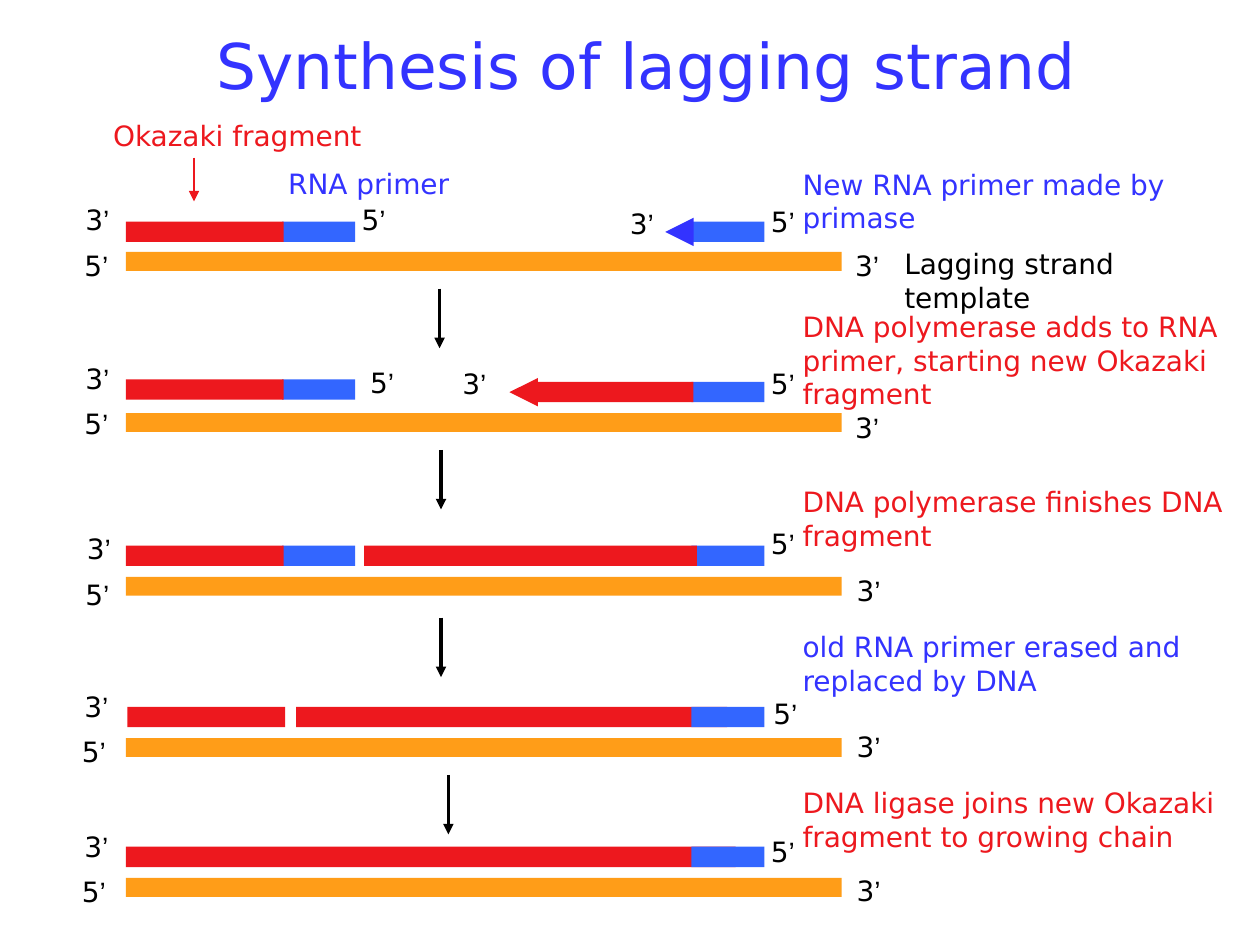
import dataclasses

import lxml.etree
import pptx
import pptx.dml.color
import pptx.enum.shapes
import pptx.enum.text
import pptx.oxml.ns
import pptx.util

Cm = pptx.util.Cm
Pt = pptx.util.Pt


@dataclasses.dataclass(frozen=True)
class Theme:
    template: str = "FF9D18"
    dna: str = "ED181E"
    primer: str = "3366FF"
    blue_text: str = "3333FF"
    black: str = "000000"
    font: str = "DejaVu Sans"
    prime_font: str = "Arial"
    title_size: int = 36
    body_size: int = 16


THEME = Theme()
STRAND_HEIGHT = 0.41
TEMPLATE_HEIGHT = 0.38
OLD_PRIMER = (THEME.primer, 5.69, 1.47)
NEW_PRIMER = (THEME.primer, 13.94, 1.47)
OLD_FRAGMENT = (THEME.dna, 2.54, 3.18)


class StrandSlide:
    def __init__(self, page, theme):
        self.page = page
        self.theme = theme

    def color(self, value):
        return pptx.dml.color.RGBColor.from_string(value)

    def bar(self, color, left, top, width, height):
        box = self.page.shapes.add_shape(
            pptx.enum.shapes.MSO_SHAPE.RECTANGLE, Cm(left), Cm(top), Cm(width), Cm(height))
        box.shadow.inherit = False
        box.fill.solid()
        box.fill.fore_color.rgb = self.color(color)
        box.line.fill.background()
        return box

    def arrow(self, start, end, color, weight, head="med"):
        line = self.page.shapes.add_connector(
            pptx.enum.shapes.MSO_CONNECTOR.STRAIGHT, *map(Cm, start + end))
        line.line.color.rgb = self.color(color)
        line.line.width = Pt(weight)
        lxml.etree.SubElement(line.line._get_or_add_ln(), pptx.oxml.ns.qn("a:tailEnd"),
                              type="triangle", w=head, len=head)
        lxml.etree.SubElement(line._element.spPr, pptx.oxml.ns.qn("a:effectLst"))
        return line

    def growing_tip(self, bar, left, top, color):
        middle = top + STRAND_HEIGHT / 2
        tip = self.arrow((left, middle), (left - 0.53, middle), color, 3.25, "lg")
        tip.begin_connect(bar, 1)

    def text(self, words, left, top, width, height, color, wrap=False):
        box = self.page.shapes.add_textbox(Cm(left), Cm(top), Cm(width), Cm(height))
        frame = box.text_frame
        frame.word_wrap = wrap
        frame.auto_size = pptx.enum.text.MSO_AUTO_SIZE.SHAPE_TO_FIT_TEXT
        frame.text = words
        self.style(frame.paragraphs[0].runs[0], color, self.theme.body_size)
        return frame.paragraphs[0]

    def style(self, span, color, size, font=None):
        span.font.name = font or self.theme.font
        span.font.size = Pt(size)
        span.font.color.rgb = self.color(color)

    def title(self, words, left, top, width, height):
        box = self.page.shapes.add_textbox(Cm(left), Cm(top), Cm(width), Cm(height))
        frame = box.text_frame
        frame.word_wrap = True
        frame.vertical_anchor = pptx.enum.text.MSO_ANCHOR.MIDDLE
        frame.text = words
        para = frame.paragraphs[0]
        para.alignment = pptx.enum.text.PP_ALIGN.CENTER
        self.style(para.runs[0], self.theme.blue_text, self.theme.title_size)

    def strand_end(self, digit, left, top):
        para = self.text(digit, left, top, 1.02, 0.94, self.theme.black)
        span = para.add_run()
        span.text = "’"
        self.style(span, self.theme.black, self.theme.body_size, self.theme.prime_font)

    def caption(self, words, top, color, width=9.5):
        self.text(words, 15.93, top, width, 1.63, color, wrap=True)

    def step(self, template_top, strand_top, bars, ends, caption, arrow=None):
        self.bar(self.theme.template, 2.54, template_top, 14.43, TEMPLATE_HEIGHT)
        for color, left, width, *drop in bars:
            self.bar(color, left, strand_top + sum(drop), width, STRAND_HEIGHT)
        if arrow:
            center, top = arrow
            self.arrow((center, top), (center, top + 1.2), self.theme.black, 2)
        self.caption(*caption)
        for end in ends:
            self.strand_end(*end)


STEPS = [
    dict(template_top=5.08, strand_top=4.47, bars=[OLD_PRIMER, OLD_FRAGMENT],
         ends=[("3", 16.99, 4.88), ("5", 1.45, 4.88), ("3", 1.47, 3.96),
               ("5", 7.04, 3.96), ("3", 12.45, 4.04), ("5", 15.29, 3.99)],
         caption=("New RNA primer made by primase", 3.25, THEME.blue_text)),
    dict(template_top=8.33, strand_top=7.65,
         bars=[OLD_PRIMER, OLD_FRAGMENT, NEW_PRIMER + (0.05,)],
         ends=[("5", 1.45, 8.08), ("3", 1.47, 7.16), ("5", 7.21, 7.24),
               ("5", 15.29, 7.26), ("3", 9.07, 7.26), ("3", 16.99, 8.15)],
         caption=("DNA polymerase adds to RNA primer, starting new Okazaki fragment",
                  6.12, THEME.dna),
         arrow=(8.86, 5.82)),
    dict(template_top=11.63, strand_top=11,
         bars=[OLD_PRIMER, OLD_FRAGMENT, NEW_PRIMER, (THEME.dna, 7.34, 6.71)],
         ends=[("5", 1.47, 11.51), ("3", 1.5, 10.59), ("5", 15.29, 10.49),
               ("3", 17.02, 11.43)],
         caption=("DNA polymerase finishes DNA fragment", 9.65, THEME.dna),
         arrow=(8.89, 9.07)),
    dict(template_top=14.88, strand_top=14.25,
         bars=[(THEME.dna, 2.57, 3.18), (THEME.dna, 5.97, 8.69), NEW_PRIMER],
         ends=[("5", 1.4, 14.68), ("3", 1.45, 13.77), ("5", 15.34, 13.92),
               ("3", 17.02, 14.58)],
         caption=("old RNA primer erased and replaced by DNA", 12.57, THEME.blue_text, 8.43),
         arrow=(8.89, 12.45)),
    dict(template_top=17.7, strand_top=17.07,
         bars=[(THEME.dna, 2.54, 12.29), NEW_PRIMER],
         ends=[("5", 1.4, 17.5), ("3", 1.45, 16.59), ("5", 15.29, 16.69),
               ("3", 17.02, 17.48)],
         caption=("DNA ligase joins new Okazaki fragment to growing chain", 15.72, THEME.dna),
         arrow=(9.04, 15.62)),
]


def main():
    deck = pptx.Presentation()
    deck.slide_width, deck.slide_height = Cm(25.4), Cm(19.05)
    slide = StrandSlide(deck.slides.add_slide(deck.slide_layouts[6]), THEME)

    slide.title("Synthesis of lagging strand", 2.24, -0.3, 21.59, 3.18)
    for step in STEPS:
        slide.step(**step)

    primer_color, primer_left, primer_width = NEW_PRIMER
    new_primer = slide.bar(primer_color, primer_left, 4.47, primer_width, STRAND_HEIGHT)
    slide.growing_tip(new_primer, primer_left, 4.47, THEME.blue_text)
    new_fragment = slide.bar(THEME.dna, 10.8, 7.7, 3.18, STRAND_HEIGHT)
    slide.growing_tip(new_fragment, 10.8, 7.7, THEME.dna)

    slide.text("Okazaki fragment", 2.03, 2.26, 5.54, 0.94, THEME.dna)
    slide.arrow((3.91, 3.18), (3.91, 4.06), THEME.dna, 0.75)
    slide.text("RNA primer", 5.56, 3.23, 3.78, 0.94, THEME.blue_text)
    slide.text("Lagging strand template", 17.98, 4.85, 7.44, 0.94, THEME.black)

    deck.save("out.pptx")


if __name__ == "__main__":
    main()
